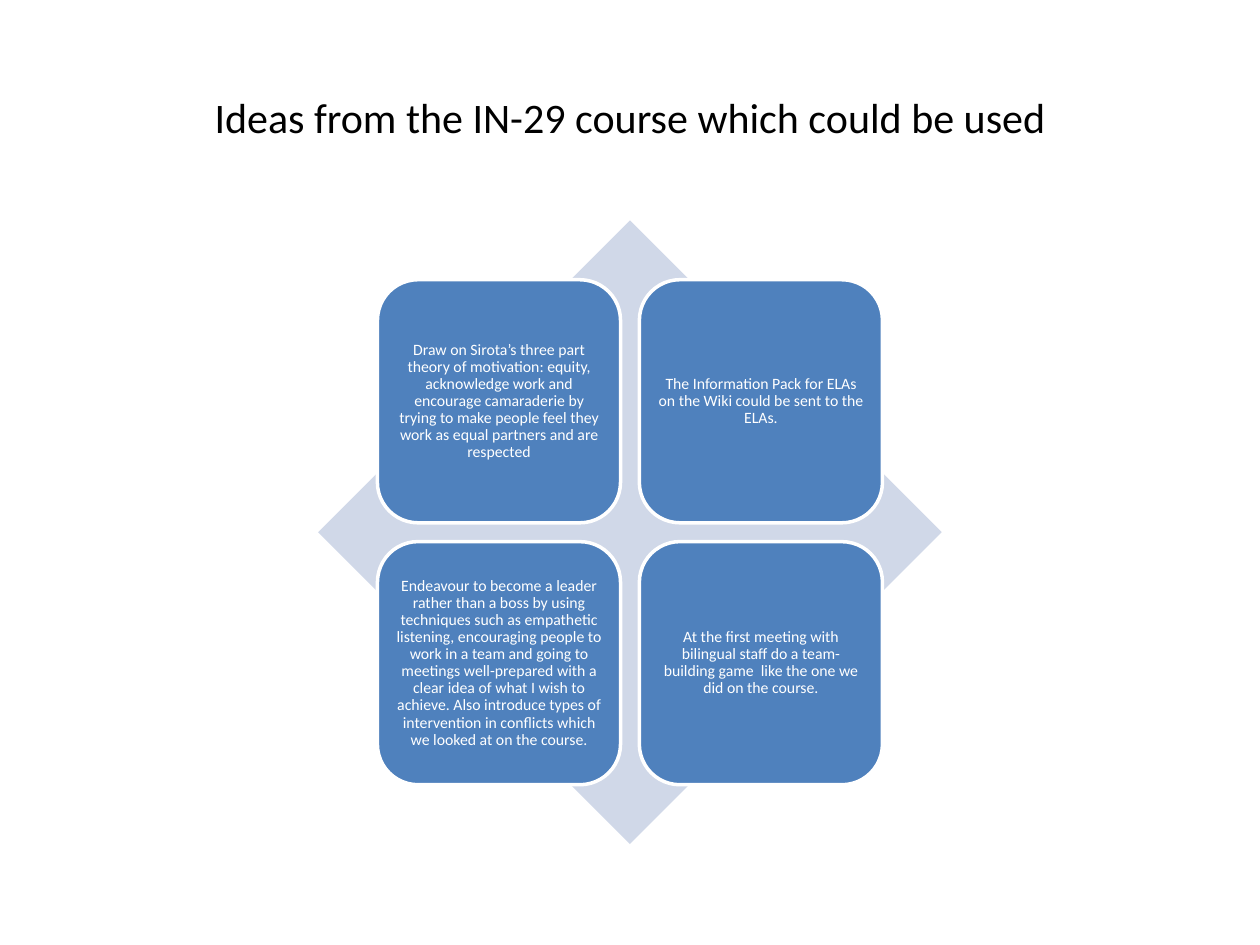
from pptx import Presentation
from pptx.dml.color import RGBColor
from pptx.enum.shapes import MSO_SHAPE
from pptx.enum.text import MSO_ANCHOR, PP_ALIGN
from pptx.util import Cm, Pt

TILE_TEXTS = [
    "Draw on Sirota’s three part theory of motivation: equity, acknowledge work "
    "and encourage camaraderie by trying to make people feel they work as equal "
    "partners and are respected",
    "The Information Pack for ELAs on the Wiki could be sent to the ELAs.",
    "Endeavour to become a leader rather than a boss by using techniques such as "
    "empathetic listening, encouraging people to work in a team and going to "
    "meetings well-prepared with a clear idea of what I wish to achieve. Also "
    "introduce types of intervention in conflicts which we looked at on the course.",
    "At the first meeting with bilingual staff do a team-building game  like the "
    "one we did on the course.",
]


def color(hex_string):
    return RGBColor.from_string(hex_string)


class MatrixSlide:
    font_name = "Calibri"
    title_color = "000000"
    diamond_color = "D0D8E8"
    tile_color = "4F81BD"
    light_color = "FFFFFF"

    def __init__(self, slide):
        self.slide = slide

    def set_text(self, shape, text, size, text_color):
        """Fill a shape with one centred paragraph."""
        frame = shape.text_frame
        frame.word_wrap = True
        frame.vertical_anchor = MSO_ANCHOR.MIDDLE
        paragraph = frame.paragraphs[0]
        paragraph.text = text
        paragraph.alignment = PP_ALIGN.CENTER
        paragraph.font.name = self.font_name
        paragraph.font.size = Pt(size)
        paragraph.font.color.rgb = color(text_color)
        return frame, paragraph

    def title(self, text, left, top, width, height):
        box = self.slide.shapes.add_textbox(Cm(left), Cm(top), Cm(width), Cm(height))
        self.set_text(box, text, 24, self.title_color)

    def centred_shape(self, kind, center_x, center_y, size, fill):
        shape = self.slide.shapes.add_shape(
            kind, Cm(center_x - size / 2), Cm(center_y - size / 2), Cm(size), Cm(size))
        shape.shadow.inherit = False
        shape.fill.solid()
        shape.fill.fore_color.rgb = color(fill)
        return shape

    def diamond(self, center_x, center_y, size):
        shape = self.centred_shape(
            MSO_SHAPE.DIAMOND, center_x, center_y, size, self.diamond_color)
        shape.line.fill.background()

    def tile(self, text, center_x, center_y, size):
        shape = self.centred_shape(
            MSO_SHAPE.ROUNDED_RECTANGLE, center_x, center_y, size, self.tile_color)
        shape.line.color.rgb = color(self.light_color)
        shape.line.width = Pt(2)
        frame, paragraph = self.set_text(shape, text, 9, self.light_color)
        paragraph.line_spacing = 0.9
        frame.margin_left = frame.margin_right = Cm(0.1)
        frame.margin_top = frame.margin_bottom = Cm(0.1)


def main():
    presentation = Presentation()
    presentation.slide_width = Cm(25.4)
    presentation.slide_height = Cm(19.05)
    matrix = MatrixSlide(presentation.slides.add_slide(presentation.slide_layouts[6]))

    # Title
    matrix.title("Ideas from the IN-29 course which could be used", 1.27, 0.76, 22.86, 3.18)

    # Diamond behind the tiles
    center_x, center_y = 12.7, 10.73
    matrix.diamond(center_x, center_y, 12.57)

    # Two by two tiles around the same centre
    pitch = 5.28
    for index, text in enumerate(TILE_TEXTS):
        row, column = divmod(index, 2)
        matrix.tile(text, center_x + (column - 0.5) * pitch,
                    center_y + (row - 0.5) * pitch, 4.9)

    presentation.save("out.pptx")


if __name__ == "__main__":
    main()
